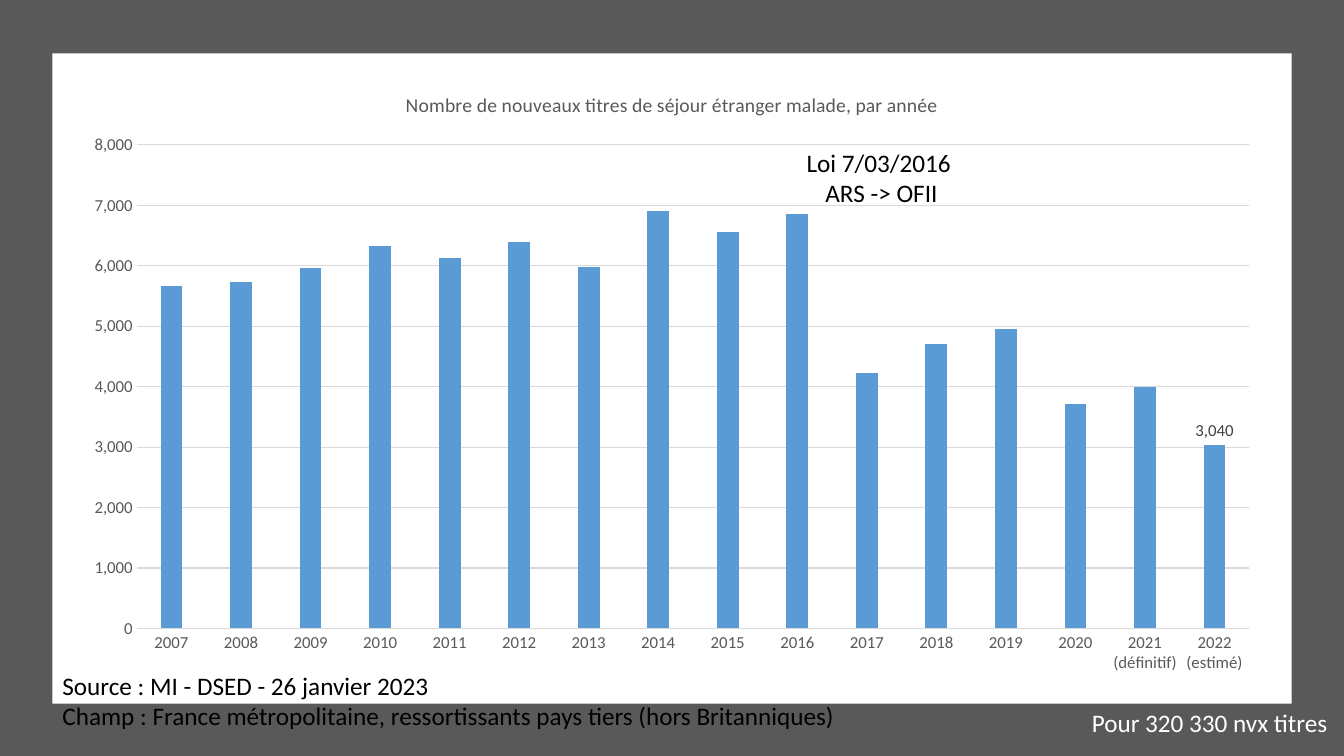
import pptx
import pptx.chart.data
import pptx.dml.color
import pptx.enum.chart
import pptx.enum.shapes
import pptx.enum.text
import pptx.oxml
import pptx.oxml.ns
import pptx.util

Inches = pptx.util.Inches
Pt = pptx.util.Pt
COLORS = {"backdrop": "595959", "white": "FFFFFF", "black": "000000", "bar": "5B9BD5",
          "axis_text": "595959", "label": "404040", "grid": "D9D9D9"}


def rgb(name):
    return pptx.dml.color.RGBColor.from_string(COLORS[name])


def style_font(font, size, color):
    font.name = "Calibri"
    font.size = Pt(size)
    font.bold = False
    font.color.rgb = rgb(color)


presentation = pptx.Presentation()
presentation.slide_width = Inches(13.33)
presentation.slide_height = Inches(7.5)
slide = presentation.slides.add_slide(presentation.slide_layouts[6])

# Grey backdrop and white panel
for left, top, width, height, color in [
    (0, 0, 13.33, 7.5, "backdrop"),
    (0.52, 0.53, 12.29, 6.45, "white"),
]:
    shape = slide.shapes.add_shape(
        pptx.enum.shapes.MSO_SHAPE.RECTANGLE,
        Inches(left), Inches(top), Inches(width), Inches(height))
    shape.shadow.inherit = False
    shape.fill.solid()
    shape.fill.fore_color.rgb = rgb(color)
    shape.line.fill.background()

# Permits per year
permits = [5672, 5733, 5965, 6325, 6122, 6396, 5986, 6912,
           6555, 6850, 4227, 4701, 4958, 3713, 3989, 3040]
chart_data = pptx.chart.data.CategoryChartData(number_format="#,##0")
chart_data.categories = [str(year) for year in range(2007, 2021)] + [
    "2021 (définitif)", "2022 (estimé)"]
chart_data.add_series("Series 1", permits)
chart = slide.shapes.add_chart(
    pptx.enum.chart.XL_CHART_TYPE.COLUMN_CLUSTERED,
    Inches(0.7), Inches(0.7), Inches(11.93), Inches(6.09), chart_data).chart
style_font(chart.font, 10, "black")
chart.has_legend = False

# Chart title
chart.has_title = True
chart.chart_title.include_in_layout = False
title_run = chart.chart_title.text_frame.paragraphs[0].add_run()
title_run.text = "Nombre de nouveaux titres de séjour étranger malade, par année"
style_font(title_run.font, 14, "axis_text")

# Columns
plot = chart.plots[0]
plot.vary_by_categories = False
plot.gap_width = 219
plot.overlap = -27
series = plot.series[0]
series.format.fill.solid()
series.format.fill.fore_color.rgb = rgb("bar")
series.data_labels.show_value = False
last_label = series.points[len(permits) - 1].data_label
style_font(last_label.font, 12, "label")
last_label.position = pptx.enum.chart.XL_LABEL_POSITION.OUTSIDE_END

# Axes
value_axis = chart.value_axis
for axis in (chart.category_axis, value_axis):
    axis.major_tick_mark = pptx.enum.chart.XL_TICK_MARK.NONE
    axis.minor_tick_mark = pptx.enum.chart.XL_TICK_MARK.NONE
    style_font(axis.tick_labels.font, 12, "axis_text")
value_axis.minimum_scale = 0
value_axis.maximum_scale = 8000
value_axis.major_unit = 1000
value_axis.tick_labels.number_format = "#,##0"
value_axis.tick_labels.number_format_is_linked = False
value_axis.format.line.fill.background()
for line in (chart.category_axis.format.line, value_axis.major_gridlines.format.line):
    line.color.rgb = rgb("grid")
    line.width = Pt(0.75)

# Plot area position, as fractions of the chart
plot_area = chart._chartSpace.chart.plotArea
for old_layout in plot_area.findall(pptx.oxml.ns.qn("c:layout")):
    plot_area.remove(old_layout)
plot_area.insert(0, pptx.oxml.parse_xml(
    f'<c:layout {pptx.oxml.ns.nsdecls("c")}><c:manualLayout>'
    '<c:layoutTarget val="inner"/><c:xMode val="edge"/><c:yMode val="edge"/>'
    '<c:x val="0.055"/><c:y val="0.121"/><c:w val="0.925"/><c:h val="0.788"/>'
    '</c:manualLayout></c:layout>'))

# Annotation, total and source
LEFT = pptx.enum.text.PP_ALIGN.LEFT
CENTER = pptx.enum.text.PP_ALIGN.CENTER
for left, top, width, height, wrap, alignment, color, lines in [
    (7.43, 1.41, 2.57, 0.71, True, CENTER, "black", ["Loi 7/03/2016", " ARS -> OFII"]),
    (10.73, 6.97, 2.55, 0.4, False, LEFT, "white", ["Pour 320 330 nvx titres"]),
    (0.52, 6.6, 7.95, 0.71, False, LEFT, "black", [
        "Source : MI - DSED - 26 janvier 2023",
        "Champ : France métropolitaine, ressortissants pays tiers (hors Britanniques)"]),
]:
    text_frame = slide.shapes.add_textbox(
        Inches(left), Inches(top), Inches(width), Inches(height)).text_frame
    text_frame.word_wrap = wrap
    text_frame.auto_size = pptx.enum.text.MSO_AUTO_SIZE.SHAPE_TO_FIT_TEXT
    for index, text in enumerate(lines):
        paragraph = text_frame.add_paragraph() if index else text_frame.paragraphs[0]
        paragraph.alignment = alignment
        run = paragraph.add_run()
        run.text = text
        style_font(run.font, 18, color)

presentation.save("out.pptx")
